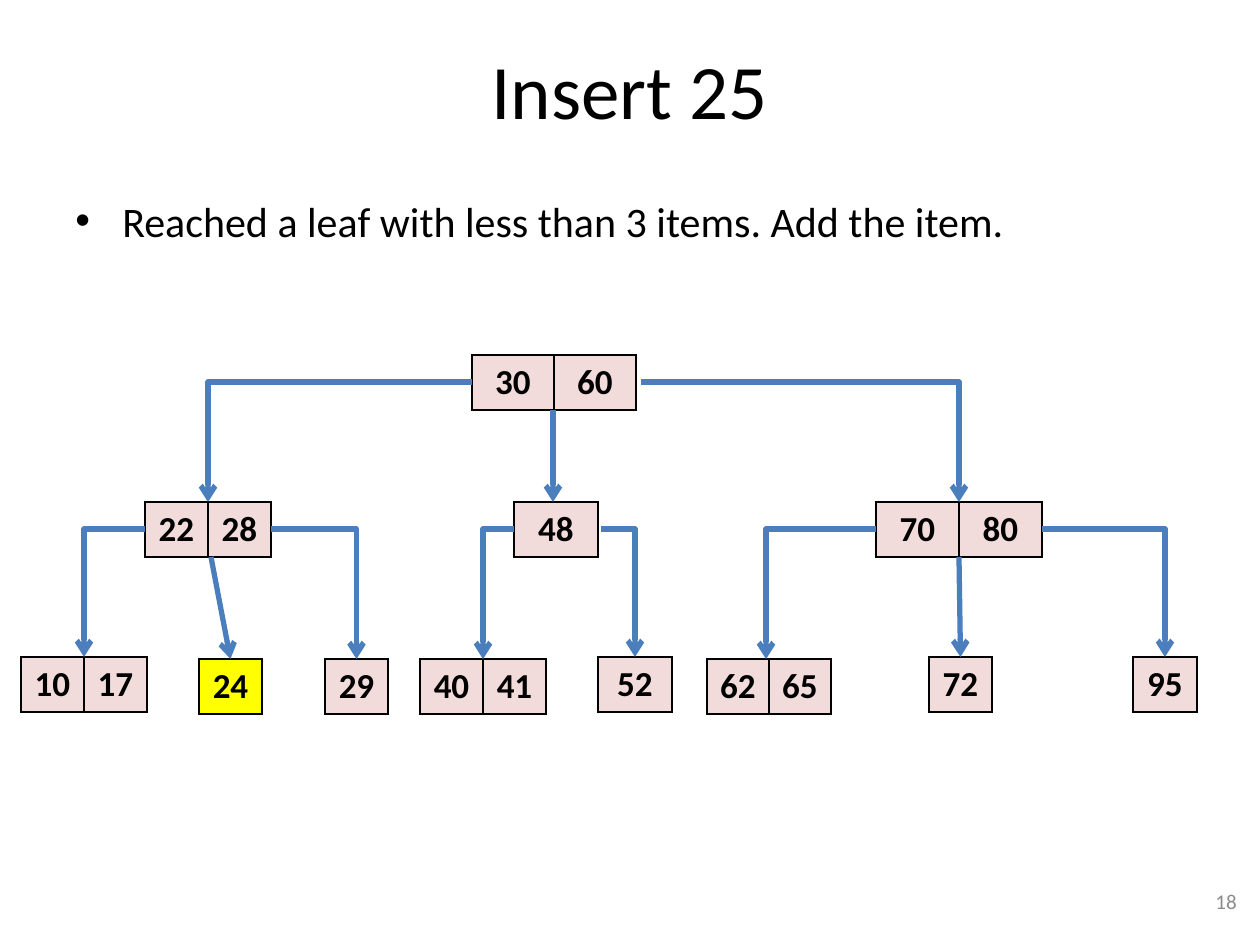
from dataclasses import dataclass
from lxml import etree
from pptx import Presentation
from pptx.dml.color import RGBColor
from pptx.enum.shapes import MSO_CONNECTOR
from pptx.enum.text import MSO_ANCHOR, PP_ALIGN
from pptx.oxml.ns import qn
from pptx.util import Emu, Pt

LINE = MSO_CONNECTOR.STRAIGHT
BENT = MSO_CONNECTOR.ELBOW
MID, TOP = MSO_ANCHOR.MIDDLE, MSO_ANCHOR.TOP
LEFT, RIGHT, CENTER = PP_ALIGN.LEFT, PP_ALIGN.RIGHT, PP_ALIGN.CENTER


@dataclass(frozen=True)
class Theme:
    font: str = "Calibri"
    ink: str = "000000"
    gray: str = "8C8C8C"
    key: str = "F2DCDB"
    new: str = "FFFF00"
    link: str = "4B7EBC"
    head: int = 44
    body: int = 24
    item: int = 20
    foot: int = 12
    rule: int = 1
    wire: int = 3


T = Theme()
ROW = 55   # height of a tree node
HALF = 27  # where side links leave a node

# name: left, top, cell width, keys (places relative to the tree box)
NODES = {
    "root": (451, 0, 82, ["30", "60"]),
    "low": (124, 147, 63, ["22", "28"]),
    "mid": (493, 147, 84, ["48"]),
    "high": (855, 147, 83, ["70", "80"]),
    "10": (0, 302, 63, ["10", "17"]),
    "24": (178, 304, 63, ["24"]),
    "29": (304, 304, 63, ["29"]),
    "40": (399, 304, 63, ["40", "41"]),
    "52": (577, 302, 74, ["52"]),
    "62": (686, 304, 62, ["62", "65"]),
    "72": (908, 302, 63, ["72"]),
    "95": (1112, 302, 64, ["95"]),
}
# parent, side it leaves from, child, shift of start, shift of tip
LINKS = [
    ("root", "left", "low", 0, 0), ("root", "down", "mid", -1, -3),
    ("root", "right", "high", 5, 0),
    ("low", "left", "10", 0, 0), ("low", "down", "24", 3, 0),
    ("low", "right", "29", 0, 0),
    ("mid", "left", "40", 0, 0), ("mid", "right", "52", 3, 0),
    ("high", "left", "62", 0, -3), ("high", "down", "72", 0, 0),
    ("high", "right", "95", 0, 0),
]


def px(n):
    return Emu(round(n * 914400 / 126))


def write(frame, text, size, color=T.ink, bold=False, align=LEFT, anchor=TOP):
    frame.word_wrap = True
    frame.vertical_anchor = anchor
    par = frame.paragraphs[0]
    par.alignment = align
    run = par.add_run()
    run.text = text
    font = run.font
    font.name, font.size, font.bold = T.font, Pt(size), bold
    font.color.rgb = RGBColor.from_string(color)
    return par


def title(slide, box, text):
    shape = slide.shapes.title
    shape.left, shape.top, shape.width, shape.height = map(px, box)
    write(shape.text_frame, text, T.head, align=CENTER, anchor=MID)


def body(slide, box, text):
    frame = slide.shapes.add_textbox(*map(px, box)).text_frame
    par = write(frame, text, T.body)
    par.space_before = Pt(5)
    props = par._p.get_or_add_pPr()
    props.set("marL", str(px(47)))
    props.set("indent", str(-px(47)))
    etree.SubElement(props, qn("a:buFont"), typeface="Arial")
    etree.SubElement(props, qn("a:buChar"), char="•")


def footer(slide, box, text):
    frame = slide.shapes.add_textbox(*map(px, box)).text_frame
    write(frame, text, T.foot, color=T.gray, align=RIGHT, anchor=MID)


def border(cell):
    props = cell._tc.get_or_add_tcPr()
    for i, side in enumerate(("lnL", "lnR", "lnT", "lnB")):
        line = etree.Element(qn("a:" + side), w=str(Pt(T.rule)))
        fill = etree.SubElement(line, qn("a:solidFill"))
        etree.SubElement(fill, qn("a:srgbClr"), val=T.ink)
        props.insert(i, line)


def node(slide, box, keys, color):
    table = slide.shapes.add_table(1, len(keys), *map(px, box)).table
    table.first_row = table.horz_banding = False
    for cell, col, key in zip(table.rows[0].cells, table.columns, keys):
        col.width = px(box[2] / len(keys))
        cell.margin_left = cell.margin_right = px(6)
        cell.fill.solid()
        cell.fill.fore_color.rgb = RGBColor.from_string(color)
        write(cell.text_frame, key, T.item, bold=True, align=CENTER)
        border(cell)


def arrow(slide, start, end):
    (x1, y1), (x2, y2) = start, end
    bent = abs(x2 - x1) > 25
    flip = bent and x2 < x1
    if flip:
        x1, x2 = x2, x1
    link = slide.shapes.add_connector(
        BENT if bent else LINE, px(x1), px(y1), px(x2), px(y2))
    props = link._element.spPr
    if bent:
        props.find(qn("a:prstGeom")).set("prst", "bentConnector2")
    if flip:  # half turn plus flip: leaves to the left, then drops
        frame = props.find(qn("a:xfrm"))
        frame.set("rot", "10800000")
        frame.set("flipV", "1")
    link.line.color.rgb = RGBColor.from_string(T.link)
    link.line.width = Pt(T.wire)
    etree.SubElement(link.line._get_or_add_ln(), qn("a:tailEnd"), type="arrow")
    etree.SubElement(props, qn("a:effectLst"))


def tree(slide, box, fresh):
    left, top = box[:2]
    spots = {}
    for name, (x, y, wide, keys) in NODES.items():
        spot = (left + x, top + y, wide * len(keys), ROW)
        spots[name] = spot
        node(slide, spot, keys, T.new if name == fresh else T.key)
    for parent, side, child, shift, nudge in LINKS:
        x, y, wide, high = spots[parent]
        start = {"left": (x + shift, y + HALF),
                 "right": (x + wide + shift, y + HALF),
                 "down": (x + wide / 2 + shift, y + high)}[side]
        cx, cy, span, _ = spots[child]
        arrow(slide, start, (cx + span / 2 + nudge, cy))


def main():
    deck = Presentation()
    deck.slide_width, deck.slide_height = px(1260), px(945)
    slide = deck.slides.add_slide(deck.slide_layouts.get_by_name("Title Only"))
    title(slide, (63, 10, 1134, 158), "Insert 25")
    body(slide, (63, 189, 1134, 693),
         "Reached a leaf with less than 3 items. Add the item.")
    footer(slide, (955, 876, 294, 50), "18")
    tree(slide, (21, 355, 1176, 359), "24")
    deck.save("out.pptx")


if __name__ == "__main__":
    main()
